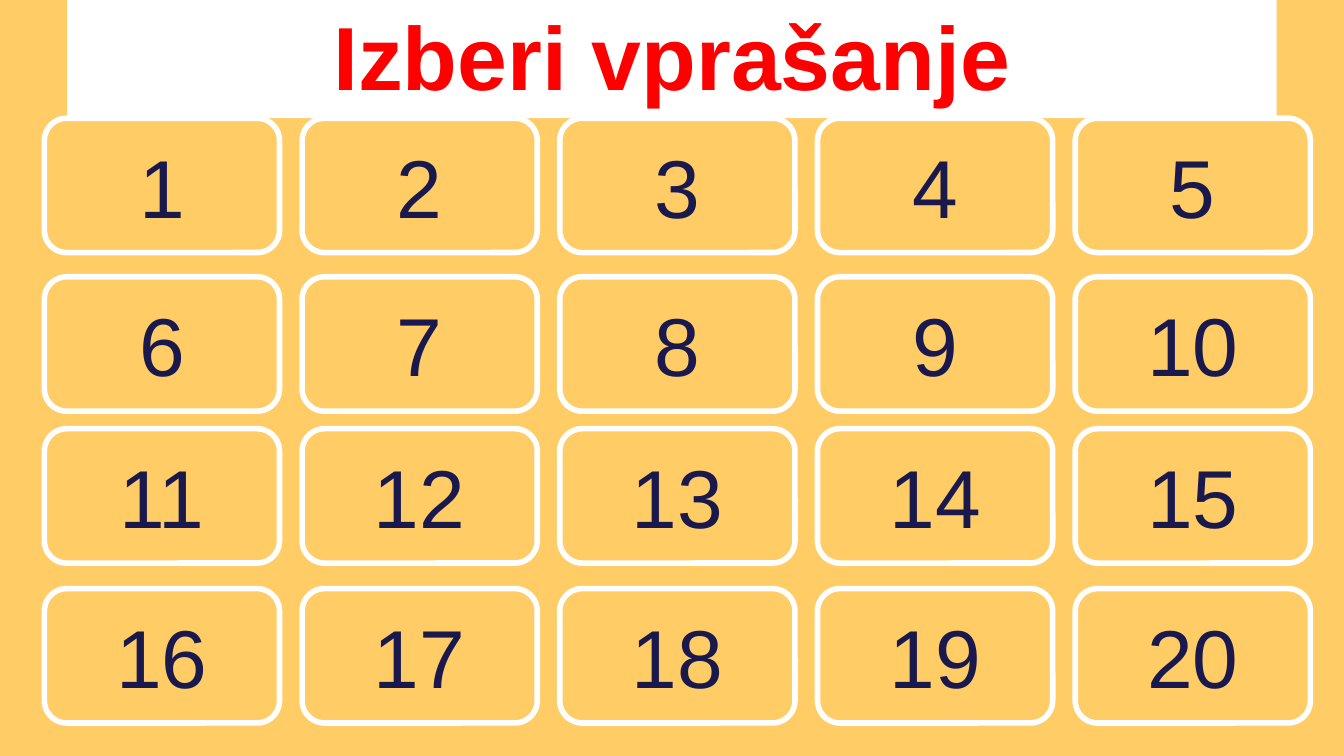
from pptx import Presentation
from pptx.dml.color import RGBColor
from pptx.enum.shapes import MSO_SHAPE
from pptx.enum.text import MSO_ANCHOR, PP_ALIGN
from pptx.util import Inches, Pt

RECT = MSO_SHAPE.RECTANGLE
ROUNDED = MSO_SHAPE.ROUNDED_RECTANGLE
MIDDLE = MSO_ANCHOR.MIDDLE
CENTER = PP_ALIGN.CENTER

SAND = RGBColor(0xFF, 0xCC, 0x66)
WHITE = RGBColor(0xFF, 0xFF, 0xFF)
RED = RGBColor(0xFF, 0x00, 0x00)
NAVY = RGBColor(0x19, 0x19, 0x4D)

TITLE = "Izberi vprašanje"
QUESTIONS = range(1, 21)

SLIDE_W = 10
SLIDE_H = SLIDE_W * 9 / 16
COLUMNS = 5
FIRST_LEFT, LAST_LEFT = 0.33, 8
COLUMN_STEP = (LAST_LEFT - FIRST_LEFT) / (COLUMNS - 1)
ROW_TOPS = [0.88, 2.06, 3.19, 4.38]
CARD_W, CARD_H = 1.75, 1


def add_box(s, kind, x, y, w, h, text, size, color, bold=False):
    box = s.shapes.add_shape(kind, Inches(x), Inches(y), Inches(w), Inches(h))
    box.shadow.inherit = False
    tf = box.text_frame
    tf.vertical_anchor = MIDDLE
    p = tf.paragraphs[0]
    p.alignment = CENTER
    r = p.add_run()
    r.text = text
    r.font.name = "Arial"
    r.font.size = Pt(size)
    r.font.bold = bold
    r.font.color.rgb = color
    return box


prs = Presentation()
prs.slide_width, prs.slide_height = Inches(SLIDE_W), Inches(SLIDE_H)
s = prs.slides.add_slide(prs.slide_layouts[6])
s.background.fill.solid()
s.background.fill.fore_color.rgb = SAND

banner = add_box(s, RECT, 0.5, -0.06, 9, 0.94, TITLE, 48, RED, bold=True)
banner.fill.solid()
banner.fill.fore_color.rgb = WHITE
banner.line.fill.background()

for i, number in enumerate(QUESTIONS):
    row, column = divmod(i, COLUMNS)
    card = add_box(s, ROUNDED, FIRST_LEFT + column * COLUMN_STEP, ROW_TOPS[row],
                   CARD_W, CARD_H, str(number), 44, NAVY)
    card.text_frame.word_wrap = False
    card.fill.background()
    card.line.color.rgb = WHITE
    card.line.width = Pt(3)

prs.save("out.pptx")
